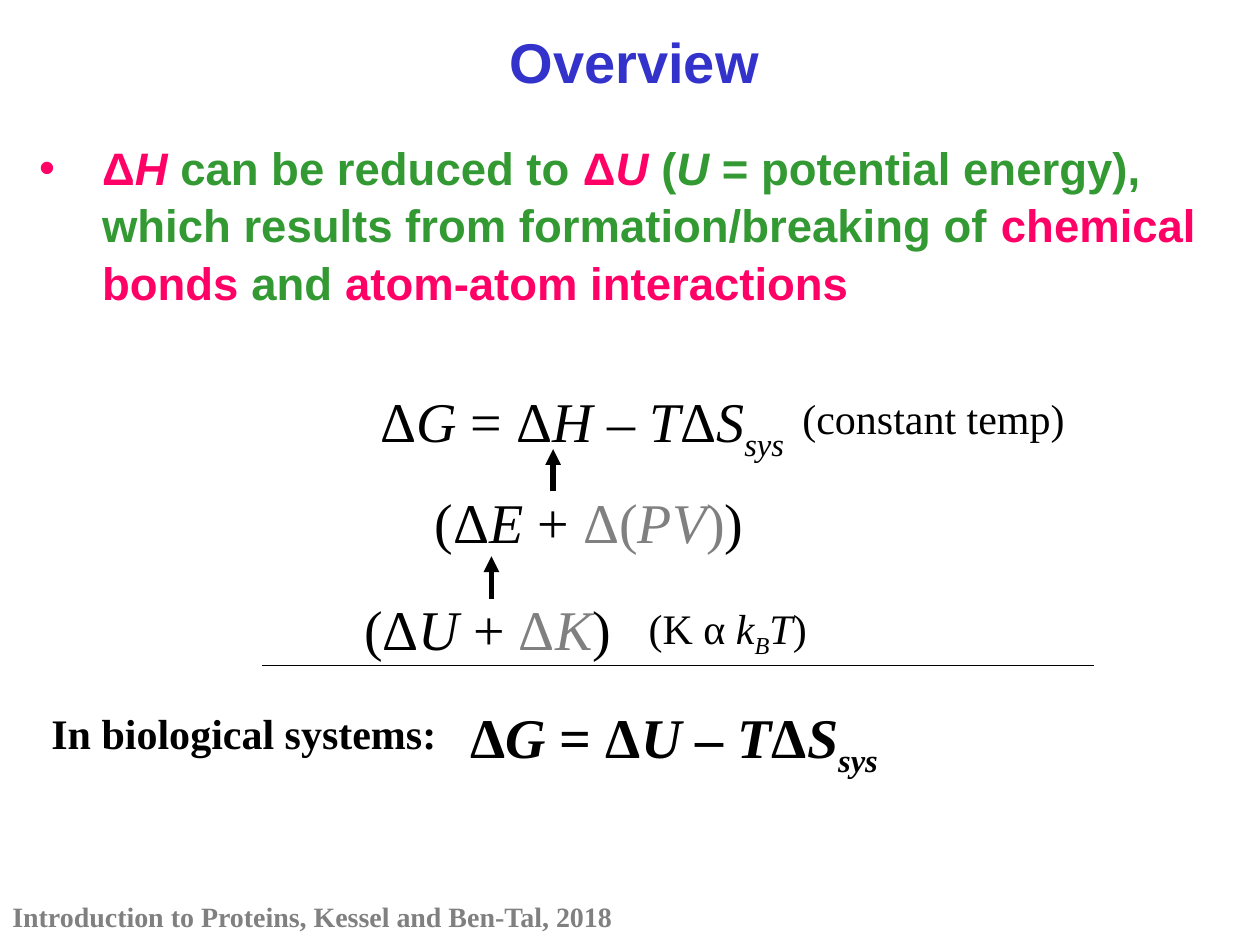
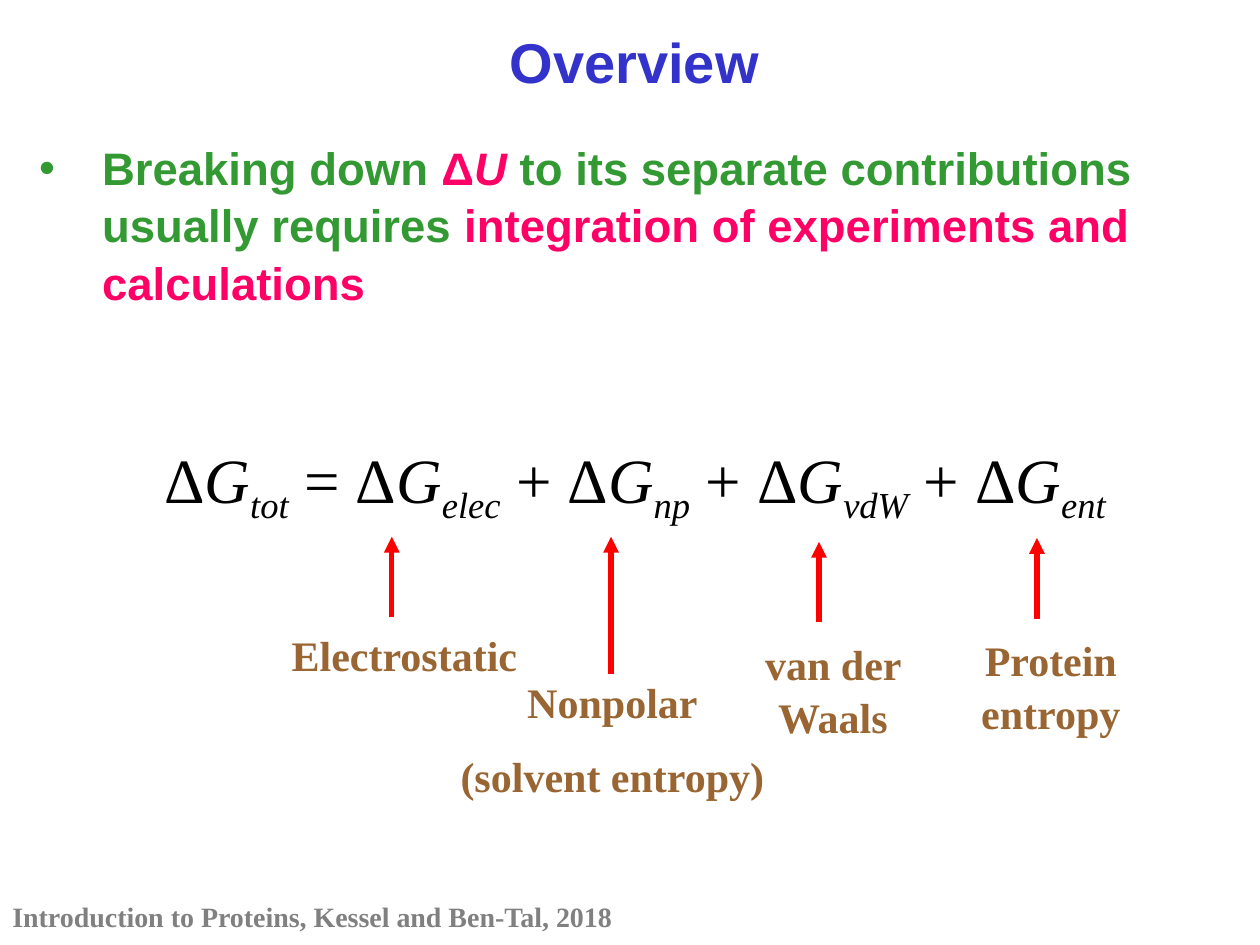
from lxml import etree
from pptx import Presentation
from pptx.dml.color import RGBColor
from pptx.enum.shapes import MSO_CONNECTOR
from pptx.enum.text import MSO_ANCHOR, MSO_AUTO_SIZE, PP_ALIGN
from pptx.oxml.ns import qn
from pptx.util import Inches, Pt

LEFT, CENTER = PP_ALIGN.LEFT, PP_ALIGN.CENTER
TOP, NO_FIT = MSO_ANCHOR.TOP, MSO_AUTO_SIZE.NONE
STRAIGHT = MSO_CONNECTOR.STRAIGHT

# Grid of 100 columns by 75 rows
SLIDE_W, SLIDE_H = Inches(10), Inches(7.5)
COL, ROW = SLIDE_W / 100, SLIDE_H / 75

BLUE, GREEN, PINK, GREY = "3333CC", "339933", "FF0066", "808080"
BROWN, RED, BLACK = "996633", "FF0000", "000000"
SANS, SERIF = "Arial", "Times New Roman"

# Text styles: "accent" is the colour of runs marked with ~
TITLE = dict(name=SANS, size=32, bold=True, color=BLUE, align=CENTER)
BODY = dict(name=SANS, size=26, bold=True, color=GREEN, accent=PINK, align=LEFT)
FOOTER = dict(name=SERIF, size=16, bold=True, color=GREY, align=LEFT)
FORMULA = dict(name=SERIF, size=32, bold=False, color=BLACK, accent=GREY, align=CENTER)
RESULT = {**FORMULA, "bold": True}
SUM = {**FORMULA, "size": 36}
NOTE = {**FORMULA, "size": 24, "align": LEFT}
LEAD = {**NOTE, "bold": True}
LABEL = dict(name=SERIF, size=24, bold=True, color=BROWN, align=CENTER)

TITLE_BOX = (3.1, 1.4, 94.5, 6.3)
BODY_BOX = (2.1, 10.4, 97.9, 14.1)
FOOTER_BOX = (0, 70.8, 51.7, 3.7)


def rgb(color):
    return RGBColor.from_string(color)


def cells(x, y, origin=(0, 0)):
    """Turn grid cells, counted from an origin, into lengths."""
    return round((origin[0] + x) * COL), round((origin[1] + y) * ROW)


def add_run(p, piece, style):
    """Add one run; leading marks: ~ accent, * italic, _ italic subscript."""
    text = piece.lstrip("~*_")
    marks = piece[:len(piece) - len(text)]
    r = p.add_run()
    r.text = text
    values = dict(name=style["name"], size=Pt(style["size"]), bold=style["bold"],
                  italic="*" in marks or "_" in marks)
    for key, value in values.items():
        setattr(r.font, key, value)
    r.font.color.rgb = rgb(style["accent" if "~" in marks else "color"])
    if "_" in marks:
        r.font._element.set("baseline", "-25000")


def write(sp, paragraphs, style):
    """Fill a shape; pieces of a paragraph are separated by |."""
    tf = sp.text_frame
    for key, value in dict(word_wrap=True, auto_size=NO_FIT, vertical_anchor=TOP).items():
        setattr(tf, key, value)
    for i, line in enumerate(paragraphs):
        p = tf.add_paragraph() if i else tf.paragraphs[0]
        spacing = dict(alignment=style["align"], line_spacing=1.05,
                       space_before=Pt(style["size"] / 2 if i else 0))
        for key, value in spacing.items():
            setattr(p, key, value)
        for piece in line.split("|"):
            add_run(p, piece, style)


def add_text(s, box, paragraphs, style, origin=(0, 0)):
    x, y, w, h = box
    sp = s.shapes.add_textbox(*cells(x, y, origin), *cells(w, h))
    write(sp, paragraphs, style)


def fill_placeholder(sp, box, text, style):
    x, y, w, h = box
    sp.left, sp.top = cells(x, y)
    sp.width, sp.height = cells(w, h)
    write(sp, [text], style)


def add_line(s, start, end, origin, color, width, arrow=False):
    c = s.shapes.add_connector(STRAIGHT, *cells(*start, origin), *cells(*end, origin))
    c.line.color.rgb = rgb(color)
    c.line.width = Pt(width)
    spPr = c._element.spPr
    if arrow:
        etree.SubElement(spPr.find(qn("a:ln")), qn("a:tailEnd"), type="triangle")
    etree.SubElement(spPr, qn("a:effectLst"))


def add_overview_slide(prs, bullet):
    """Slide with the shared title, one bullet and the source line."""
    s = prs.slides.add_slide(prs.slide_layouts[1])
    title, body = s.placeholders
    fill_placeholder(title, TITLE_BOX, "Overview", TITLE)
    fill_placeholder(body, BODY_BOX, bullet, BODY)
    pPr = body.text_frame.paragraphs[0]._p.get_or_add_pPr()
    pPr.set("marL", str(Inches(0.5)))
    pPr.set("indent", str(-Inches(0.5)))
    etree.SubElement(pPr, qn("a:buChar"), char="•")
    add_text(s, FOOTER_BOX, ["Introduction to Proteins, Kessel and Ben-Tal, 2018"], FOOTER)
    return s


def add_derivation(s, origin):
    """Stepwise reduction of enthalpy, ruled off above the result."""
    parts = [
        ((29.2, 0, 35.9, 6.4), "Δ|*G| = Δ|*H| – |*T|Δ|*S|_sys", {**FORMULA, "align": LEFT}),
        ((62.7, 0.6, 25, 5.1), "(constant temp)", NOTE),
        ((32.3, 8, 28.9, 6.4), "(Δ|*E| + |~Δ(|~*PV|~)|)", FORMULA),
        ((26.9, 16.5, 23.6, 6.4), "(Δ|*U| + |~Δ|~*K|)", FORMULA),
        ((50.5, 17.2, 17, 5), "(K α |*k|_B|*T|)", NOTE),
        ((3.1, 25.6, 34, 5.1), "In biological systems:", LEAD),
        ((29.2, 25.1, 48.6, 6.4), "Δ|*G| = Δ|*U| – |*T|Δ|*S|_sys", RESULT),
    ]
    for box, text, style in parts:
        add_text(s, box, [text], style, origin)
    for x, y in ((43.9, 9.1), (39, 17.6)):
        add_line(s, (x, y), (x, y - 3.35), origin, BLACK, 3, arrow=True)
    add_line(s, (20.8, 22.9), (86.8, 22.9), origin, BLACK, 0.75)


def add_contributions(s, origin):
    """Sum of free energy terms, each explained by an arrow and a label."""
    terms = "| + Δ|*G|_".join(["Δ|*G|_tot| = Δ|*G|_elec", "np", "vdW", "ent"])
    add_text(s, (10.2, 0, 80.4, 7.1), [terms], SUM, origin)
    # Arrow x, tip and length, then label box and lines
    labels = [
        (31.1, 8.5, 6.4, (21.4, 15.2, 21.4, 5), ["Electrostatic"]),
        (48.5, 8.5, 10.9, (35.5, 18.9, 26.2, 11.1), ["Nonpolar", "(solvent entropy)"]),
        (65, 8.9, 6.4, (55.7, 15.9, 20.8, 9), ["van der Waals"]),
        (82.3, 8.6, 6.4, (73, 15.6, 20.8, 9), ["Protein entropy"]),
    ]
    for x, tip, length, box, lines in labels:
        add_line(s, (x, tip + length), (x, tip), origin, RED, 3, arrow=True)
        add_text(s, box, lines, LABEL, origin)


def main():
    prs = Presentation()
    prs.slide_width, prs.slide_height = SLIDE_W, SLIDE_H

    s = add_overview_slide(
        prs, "~Δ|~*H| can be reduced to |~Δ|~*U |(|*U| = potential energy), which results "
        "from formation/breaking of |~chemical bonds| and |~atom-atom interactions")
    add_derivation(s, (0, 29.9))

    s = add_overview_slide(
        prs, "Breaking down |~Δ|~*U |to its separate contributions usually requires "
        "|~integration of experiments and calculations")
    add_contributions(s, (0, 34.1))

    prs.save("out.pptx")


if __name__ == "__main__":
    main()
